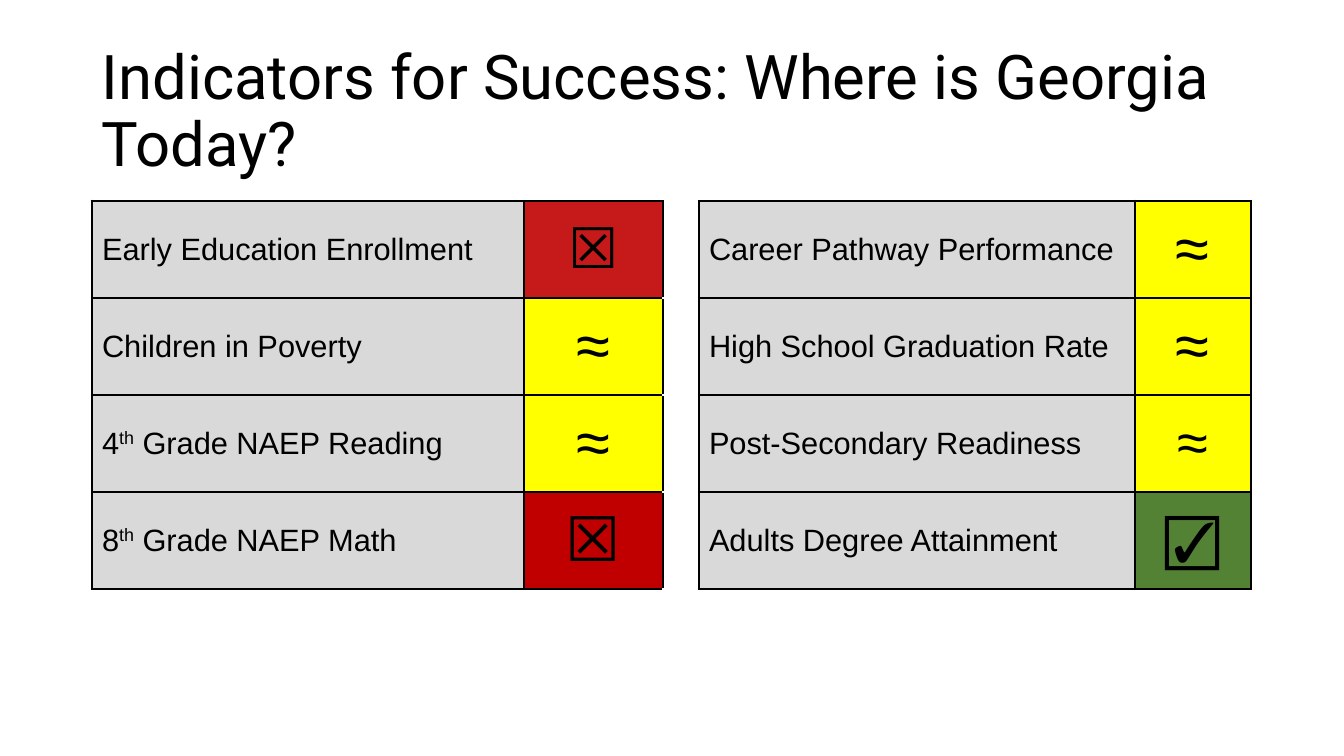
from lxml import etree
from pptx import Presentation
from pptx.dml.color import RGBColor
from pptx.enum.text import MSO_ANCHOR, PP_ALIGN
from pptx.oxml.ns import qn
from pptx.util import Emu, Pt

MIDDLE = MSO_ANCHOR.MIDDLE
LEFT, CENTER = PP_ALIGN.LEFT, PP_ALIGN.CENTER

BLACK = RGBColor(0x00, 0x00, 0x00)
GREY = RGBColor(0xD9, 0xD9, 0xD9)
RED = RGBColor(0xC0, 0x00, 0x00)
YELLOW = RGBColor(0xFF, 0xFF, 0x00)
GREEN = RGBColor(0x54, 0x82, 0x35)

# Content: label (a tuple marks a superscript in its middle), symbol, size, fill, opacity
TITLE = "Indicators for Success: Where is Georgia Today?"
LEFT_INDICATORS = [
    (("Early Education Enrollment",), "☒", 40, RED, 90),
    (("Children in Poverty",), "≈", 44, YELLOW, 100),
    (("4", "th", " Grade NAEP Reading"), "≈", 44, YELLOW, 100),
    (("8", "th", " Grade NAEP Math"), "☒", 44, RED, 100),
]
RIGHT_INDICATORS = [
    (("Career Pathway Performance",), "≈", 44, YELLOW, 100),
    (("High School Graduation Rate",), "≈", 44, YELLOW, 100),
    (("Post-Secondary Readiness",), "≈", 40, YELLOW, 100),
    (("Adults Degree Attainment",), "☑", 40, GREEN, 100),
]

# Layout in px
SLIDE_WIDTH, SLIDE_HEIGHT = 1344, 756
TITLE_BOX = (92, 40, 1159, 146)
TABLE_LEFT, TABLE_TOP = 92, 201
COLUMN_WIDTHS = [432, 139, 36, 436, 116]
ROW_HEIGHT = 97
GAP_COLUMN = 2
THICK, THIN = 2.25, 1


def px(length):
    return Emu(round(length * 914400 / 100.8))


def write(frame, parts, size, font="Arial", align=LEFT, spacing=None):
    para = frame.paragraphs[0]
    para.alignment = align
    if spacing:
        para.line_spacing = spacing
    for index, part in enumerate(parts):
        span = para.add_run()
        span.text = part
        span.font.size = Pt(size)
        span.font.name = font
        span.font.color.rgb = BLACK
        if index == 1:
            span._r.get_or_add_rPr().set("baseline", "30000")


def add_borders(cell, widths):
    properties = cell._tc.get_or_add_tcPr()
    for side, width in widths.items():
        line = etree.SubElement(properties, qn(f"a:ln{side}"), w=str(Pt(width)))
        paint = etree.SubElement(line, qn("a:solidFill"))
        etree.SubElement(paint, qn("a:srgbClr"), val=str(BLACK))


def paint_cell(cell, color, opacity=100):
    cell.fill.solid()
    cell.fill.fore_color.rgb = color
    if opacity < 100:
        tint = cell._tc.tcPr.find(qn("a:solidFill")).find(qn("a:srgbClr"))
        etree.SubElement(tint, qn("a:alpha"), val=str(opacity * 1000))


deck = Presentation()
deck.slide_width, deck.slide_height = px(SLIDE_WIDTH), px(SLIDE_HEIGHT)
page = deck.slides.add_slide(deck.slide_layouts[6])

# Title
title = page.shapes.add_textbox(*map(px, TITLE_BOX)).text_frame
title.word_wrap = True
title.vertical_anchor = MIDDLE
write(title, [TITLE], 44, font="Roboto", spacing=0.9)

# Table grid
row_count = len(LEFT_INDICATORS)
table = page.shapes.add_table(
    row_count, len(COLUMN_WIDTHS), px(TABLE_LEFT), px(TABLE_TOP),
    px(sum(COLUMN_WIDTHS)), px(ROW_HEIGHT * row_count)).table
table.first_row = table.horz_banding = False
for column, width in zip(table.columns, COLUMN_WIDTHS):
    column.width = px(width)
for row in table.rows:
    row.height = px(ROW_HEIGHT)

# Indicators on both sides of the open gap column
for row in range(row_count):
    gap = table.cell(row, GAP_COLUMN)
    add_borders(gap, {"L": THICK, "R": THICK})
    gap.fill.background()
    for first, indicators in ((0, LEFT_INDICATORS), (GAP_COLUMN + 1, RIGHT_INDICATORS)):
        label, symbol, size, color, opacity = indicators[row]
        label_cell, symbol_cell = table.cell(row, first), table.cell(row, first + 1)
        for cell in (label_cell, symbol_cell):
            cell.vertical_anchor = MIDDLE
            add_borders(cell, {"L": THICK, "R": THICK,
                               "T": THIN if row else THICK, "B": THIN})
        paint_cell(label_cell, GREY)
        paint_cell(symbol_cell, color, opacity)
        write(label_cell.text_frame, label, 22)
        write(symbol_cell.text_frame, [symbol], size, align=CENTER)

deck.save("out.pptx")
